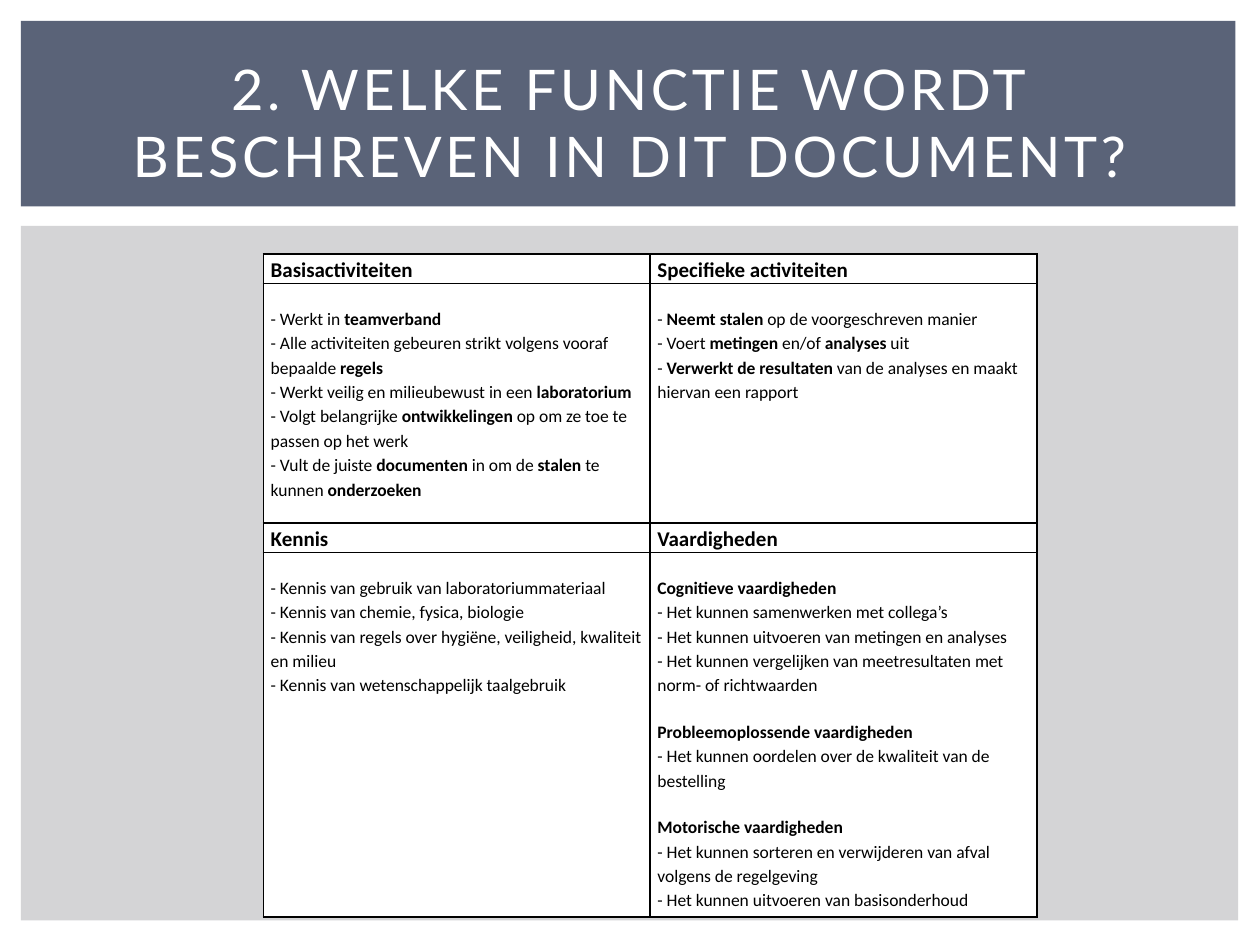
from pptx import Presentation
from pptx.dml.color import RGBColor
from pptx.enum.shapes import MSO_SHAPE
from pptx.enum.text import MSO_ANCHOR, MSO_AUTO_SIZE, PP_ALIGN
from pptx.oxml import parse_xml
from pptx.oxml.ns import nsdecls
from pptx.util import Pt

WHITE = RGBColor(0xFF, 0xFF, 0xFF)
BLACK = RGBColor(0x00, 0x00, 0x00)
SLATE = RGBColor(0x5A, 0x63, 0x78)
GREY = RGBColor(0xD4, 0xD4, 0xD6)

TITLE = "2. WELKE FUNCTIE WORDT BESCHREVEN IN DIT DOCUMENT?"
GAP = 12.6
ROW_HEIGHTS = [16.8, 136.9, 16.8, 208.3]
HEADINGS = [["Basisactiviteiten", "Specifieke activiteiten"], ["Kennis", "Vaardigheden"]]
BODIES = [
    [
        [[
            "- Werkt in **teamverband**",
            "- Alle activiteiten gebeuren strikt volgens vooraf bepaalde **regels**",
            "- Werkt veilig en milieubewust in een **laboratorium**",
            "- Volgt belangrijke **ontwikkelingen** op om ze toe te passen op het werk",
            "- Vult de juiste **documenten** in om de **stalen** te kunnen **onderzoeken**",
        ]],
        [[
            "- **Neemt stalen** op de voorgeschreven manier",
            "- Voert **metingen** en/of **analyses** uit",
            "- **Verwerkt de resultaten** van de analyses en maakt hiervan een rapport",
        ]],
    ],
    [
        [[
            "- Kennis van gebruik van laboratoriummateriaal",
            "- Kennis van chemie, fysica, biologie",
            "- Kennis van regels over hygiëne, veiligheid, kwaliteit en milieu",
            "- Kennis van wetenschappelijk taalgebruik",
        ]],
        [
            [
                "**Cognitieve vaardigheden**",
                "- Het kunnen samenwerken met collega’s",
                "- Het kunnen uitvoeren van metingen en analyses",
                "- Het kunnen vergelijken van meetresultaten met norm- of richtwaarden",
            ],
            [
                "**Probleemoplossende vaardigheden**",
                "- Het kunnen oordelen over de kwaliteit van de bestelling",
            ],
            [
                "**Motorische vaardigheden**",
                "- Het kunnen sorteren en verwijderen van afval volgens de regelgeving",
                "- Het kunnen uitvoeren van basisonderhoud",
            ],
        ],
    ],
]


def add_panel(s, x, y, w, h, color):
    """Add a plain filled rectangle."""
    sp = s.shapes.add_shape(MSO_SHAPE.RECTANGLE, Pt(x), Pt(y), Pt(w), Pt(h))
    sp.shadow.inherit = False
    sp.fill.solid()
    sp.fill.fore_color.rgb = color
    sp.line.fill.background()


def add_title(s, x, y, w, h):
    """Add the title band and set the title inside it."""
    add_panel(s, x, y, w, h, SLATE)
    title = s.shapes.title
    s.shapes._spTree.append(title._element)
    title.left, title.top = Pt(x + 18), Pt(y + 16)
    title.width, title.height = Pt(w - 34), Pt(h - 23)
    tf = title.text_frame
    tf.word_wrap = True
    tf.auto_size = MSO_AUTO_SIZE.NONE
    tf.vertical_anchor = MSO_ANCHOR.MIDDLE
    p = tf.paragraphs[0]
    p.alignment = PP_ALIGN.CENTER
    r = p.add_run()
    r.text = TITLE
    r.font.name, r.font.size, r.font.color.rgb = "Lato", Pt(32), WHITE
    r._r.get_or_add_rPr().set("spc", "200")


def set_borders(cell):
    """Draw a thin black line on all four sides of a cell."""
    tc_pr = cell._tc.get_or_add_tcPr()
    for i, side in enumerate(("lnL", "lnR", "lnT", "lnB")):
        tc_pr.insert(i, parse_xml(
            f'<a:{side} {nsdecls("a")} w="{Pt(1)}"><a:solidFill>'
            f'<a:srgbClr val="{BLACK}"/></a:solidFill></a:{side}>'))


def fill_cell(cell, groups, size, top=0):
    """Write groups of lines in a cell, with ** around bold words."""
    cell.fill.solid()
    cell.fill.fore_color.rgb = WHITE
    set_borders(cell)
    cell.margin_left = cell.margin_right = Pt(4.2)
    cell.margin_top, cell.margin_bottom = Pt(top), Pt(0)
    tf = cell.text_frame
    lines = [(g > 0 and i == 0, line)
             for g, group in enumerate(groups) for i, line in enumerate(group)]
    for n, (spaced, line) in enumerate(lines):
        p = tf.add_paragraph() if n else tf.paragraphs[0]
        p.line_spacing = 1.15
        if spaced:
            p.space_before = Pt(GAP)
        for i, part in enumerate(line.split("**")):
            if part:
                r = p.add_run()
                r.text = part
                r.font.name, r.font.size = "Calibri", Pt(size)
                r.font.bold, r.font.color.rgb = i % 2 == 1, BLACK


def add_profile(s, x, y, w):
    """Add the table of activities, knowledge and skills."""
    frame = s.shapes.add_table(4, 2, Pt(x), Pt(y), Pt(w), Pt(sum(ROW_HEIGHTS)))
    table = frame.table
    table.first_row = table.horz_banding = False
    for row, height in zip(table.rows, ROW_HEIGHTS):
        row.height = Pt(height)
    for block, (headings, bodies) in enumerate(zip(HEADINGS, BODIES)):
        for col, (heading, body) in enumerate(zip(headings, bodies)):
            fill_cell(table.cell(2 * block, col), [[f"**{heading}**"]], 12)
            fill_cell(table.cell(2 * block + 1, col), body, 10, GAP)


def main():
    """Build the slide and save it."""
    prs = Presentation()
    prs.slide_width, prs.slide_height = Pt(720), Pt(540)
    s = prs.slides.add_slide(prs.slide_layouts[5])
    add_panel(s, 12, 129, 695.5, 397, GREY)
    add_title(s, 12, 12, 694, 106)
    add_profile(s, 150.5, 145.2, 442)
    prs.save("out.pptx")


if __name__ == "__main__":
    main()
